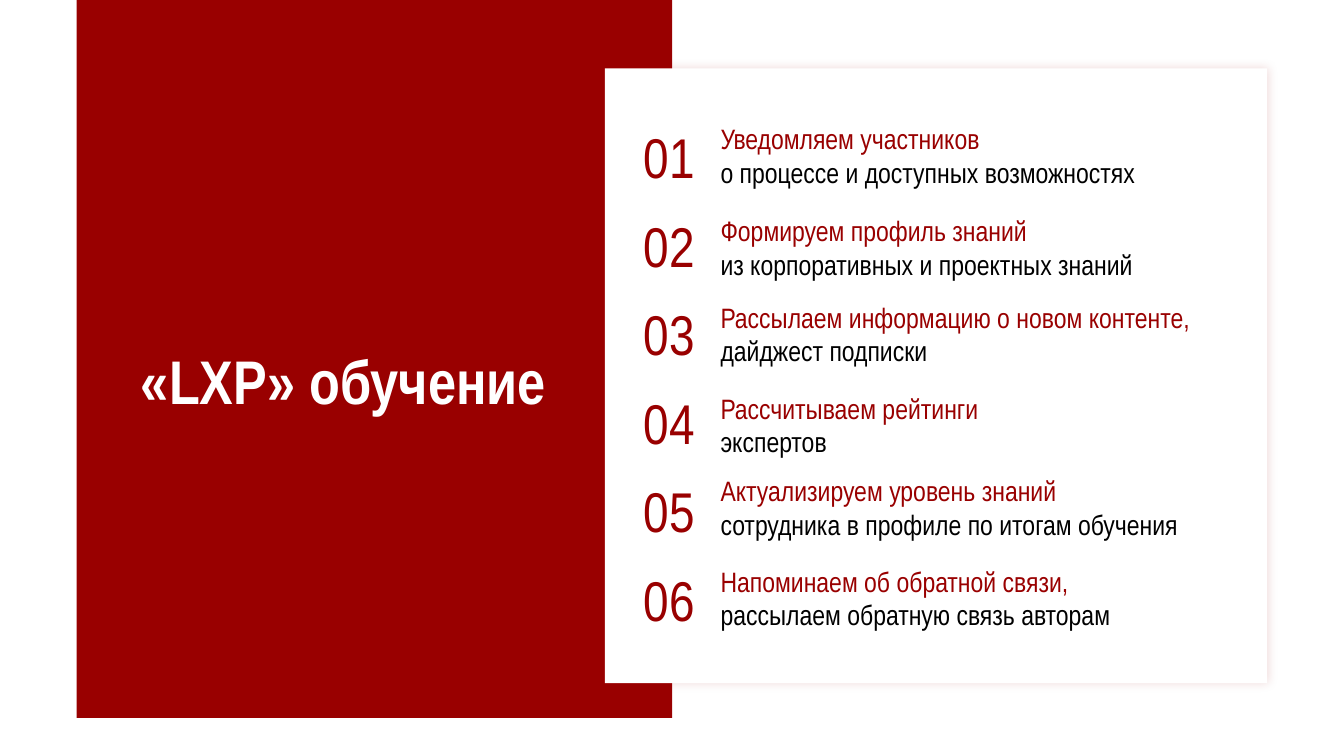
"""Build the slide listing the six steps of LXP training."""
from lxml import etree
from pptx import Presentation, util as u
from pptx.dml.color import RGBColor
from pptx.enum import shapes, text
from pptx.oxml.ns import qn

FONT = "Arial Narrow"
RED, WHITE, BLACK = "990000", "FFFFFF", "000000"
TITLE = "«LXP» обучение"
STEPS = [
    (83.5, "Уведомляем участников", "о процессе и доступных возможностях"),
    (149, "Формируем профиль знаний", "из корпоративных и проектных знаний"),
    (211, "Рассылаем информацию о новом контенте,", "дайджест подписки"),
    (275.8, "Рассчитываем рейтинги", "экспертов"),
    (334.8, "Актуализируем уровень знаний", "сотрудника в профиле по итогам обучения"),
    (399.6, "Напоминаем об обратной связи,", "рассылаем обратную связь авторам"),
]
NUMBER_TOP, NUMBER_STEP = 84.2, 63.2
NUMBER_LEFT, STEP_LEFT, ROW_HEIGHT = 452.9, 507.6, 55.4


def color(value):
    return RGBColor.from_string(value)


def add_panel(page, left, top, width, height, fill):
    panel = page.shapes.add_shape(
        shapes.MSO_SHAPE.RECTANGLE, *map(u.Pt, (left, top, width, height)))
    panel.shadow.inherit = False
    panel.fill.solid()
    panel.fill.fore_color.rgb = color(fill)
    panel.line.fill.background()
    return panel


def add_glow_shadow(panel, tint, opacity, blur):
    effects = panel._element.spPr.find(qn("a:effectLst"))
    shadow = etree.SubElement(effects, qn("a:outerShdw"), blurRad=str(u.Pt(blur)),
                              dist="0", dir="0", algn="ctr", rotWithShape="0")
    shade = etree.SubElement(shadow, qn("a:srgbClr"), val=tint)
    etree.SubElement(shade, qn("a:alpha"), val=str(opacity * 1000))


def add_text(page, lines, left, top, width, height, size, bold=False, wrap=True):
    box = page.shapes.add_textbox(*map(u.Pt, (left, top, width, height)))
    frame = box.text_frame
    frame.word_wrap = wrap
    frame.auto_size = text.MSO_AUTO_SIZE.SHAPE_TO_FIT_TEXT
    for index, (words, tint) in enumerate(lines):
        para = frame.add_paragraph() if index else frame.paragraphs[0]
        span = para.add_run()
        span.text = words
        span.font.name = FONT
        span.font.size = u.Pt(size)
        span.font.bold = bold
        span.font.color.rgb = color(tint)


def main():
    deck = Presentation()
    deck.slide_width, deck.slide_height = u.Pt(960), u.Pt(540)
    page = deck.slides.add_slide(deck.slide_layouts[6])

    add_panel(page, 54.8, 0, 425.3, 512.8, RED)
    card = add_panel(page, 432, 48.8, 473.2, 439.2, WHITE)
    add_glow_shadow(card, RED, opacity=15, blur=7)
    add_text(page, [(TITLE, WHITE)], 93.6, 241.2, 308.9, 60.5, size=44, bold=True)

    for index, (top, action, detail) in enumerate(STEPS):
        add_text(page, [(f"{index + 1:02}", RED)], NUMBER_LEFT,
                 NUMBER_TOP + index * NUMBER_STEP, 54.7, ROW_HEIGHT, size=40, wrap=False)
        add_text(page, [(action, RED), (detail, BLACK)], STEP_LEFT, top,
                 398.2, ROW_HEIGHT, size=20)

    deck.save("out.pptx")


if __name__ == "__main__":
    main()
